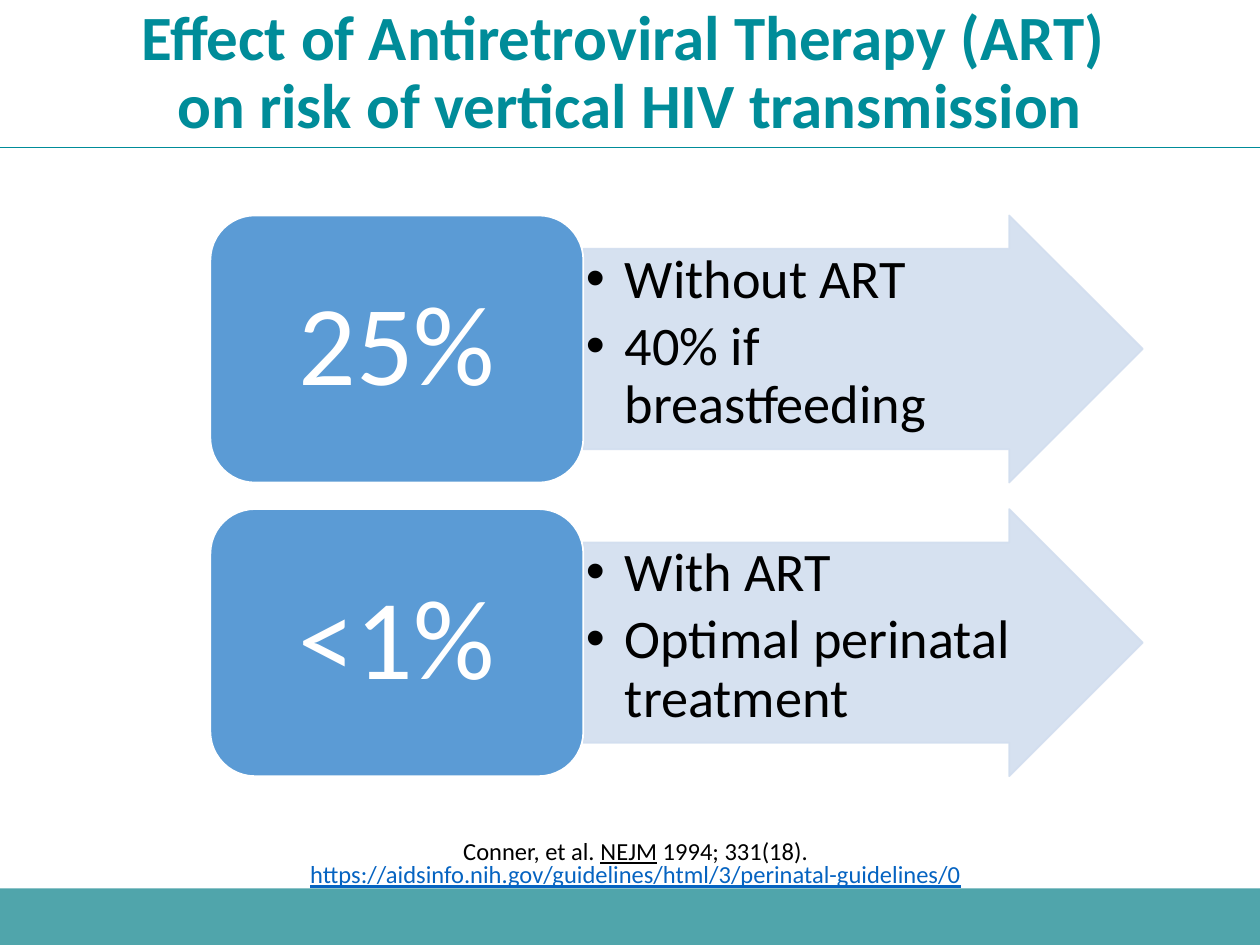
import pptx
import pptx.util
import pptx.dml.color
import pptx.enum.shapes
import pptx.enum.text
import pptx.oxml
import pptx.oxml.ns
from lxml import etree

Inches = pptx.util.Inches
Pt = pptx.util.Pt
SHAPE = pptx.enum.shapes.MSO_SHAPE
ALIGN = pptx.enum.text.PP_ALIGN
ANCHOR = pptx.enum.text.MSO_ANCHOR
SIZE = pptx.enum.text.MSO_AUTO_SIZE
qn = pptx.oxml.ns.qn

COLORS = {"teal": "008C99", "band": "50A5AB", "blue": "5B9BD5",
          "pale": "D2DEEF", "link": "0563C1", "black": "000000",
          "white": "FFFFFF"}
ROWS = [("25%", ["Without ART", "40% if breastfeeding"]),
        ("<1%", ["With ART", "Optimal perinatal treatment"])]


def color(name):
    return pptx.dml.color.RGBColor.from_string(COLORS[name])


def style(font, size, name, bold=False):
    font.name = "Calibri"
    font.size = Pt(size)
    font.bold = bold
    font.color.rgb = color(name)


def inset(frame, side, end):
    frame.margin_left = frame.margin_right = Inches(side)
    frame.margin_top = frame.margin_bottom = Inches(end)


def fade(fill, amount):
    """Set the opacity of a solid fill, in percent."""
    tint = fill.find(".//" + qn("a:srgbClr"))
    etree.SubElement(tint, qn("a:alpha"), val=str(amount * 1000))


def add_block(slide, kind, box, fill, line=None):
    block = slide.shapes.add_shape(kind, *map(Inches, box))
    block.shadow.inherit = False
    block.fill.solid()
    block.fill.fore_color.rgb = color(fill)
    if line:
        block.line.color.rgb = color(line)
        block.line.width = Pt(1)
    else:
        block.line.fill.background()
    return block


def add_title(slide, box):
    x, y, w, h = box
    title = slide.shapes.title
    title.left, title.top, title.width, title.height = map(Inches, box)
    frame = title.text_frame
    frame.word_wrap = True
    frame.auto_size = SIZE.NONE
    frame.vertical_anchor = ANCHOR.MIDDLE
    para = frame.paragraphs[0]
    para.text = ("Effect of Antiretroviral Therapy (ART) \n"
                 "on risk of vertical HIV transmission")
    para.alignment = ALIGN.CENTER
    para.line_spacing = 0.9
    for run in para.runs:
        style(run.font, 36, "teal", True)

    # Rule below the title
    rule = slide.shapes.add_connector(
        pptx.enum.shapes.MSO_CONNECTOR.STRAIGHT,
        Inches(x), Inches(y + h), Inches(x + w), Inches(y + h))
    rule.line.color.rgb = color("teal")
    rule.line.width = Pt(0.5)
    etree.SubElement(rule._element.spPr, qn("a:effectLst"))


def add_row(slide, box, rate, notes):
    x, y, w, h = box
    split = w * 0.4

    # Arrow with the conditions
    arrow = add_block(slide, SHAPE.RIGHT_ARROW,
                      (x + split, y, w - split, h), "pale", "pale")
    arrow.adjustments[0], arrow.adjustments[1] = 0.75, 0.5
    props = arrow._element.spPr
    fade(props.find(qn("a:solidFill")), 90)
    fade(props.find(qn("a:ln")), 90)
    frame = arrow.text_frame
    frame.word_wrap = True
    frame.vertical_anchor = ANCHOR.TOP
    inset(frame, 0.02, 0.02)
    for i, note in enumerate(notes):
        para = frame.add_paragraph() if i else frame.paragraphs[0]
        para.text = note
        para.alignment = ALIGN.LEFT
        para.line_spacing = 0.9
        para.space_after = Pt(4.7)
        look = para._p.get_or_add_pPr()
        look.set("marL", str(Inches(0.31)))
        look.set("indent", str(Inches(-0.31)))
        etree.SubElement(look, qn("a:buFont"), typeface="Arial")
        etree.SubElement(look, qn("a:buChar"), char="•")
        style(para.runs[0].font, 31, "black")

    # Rounded box with the risk
    risk = add_block(slide, SHAPE.ROUNDED_RECTANGLE,
                     (x, y, split, h), "blue", "white")
    frame = risk.text_frame
    frame.word_wrap = True
    frame.vertical_anchor = ANCHOR.MIDDLE
    inset(frame, 0.27, 0.14)
    frame.text = rate
    para = frame.paragraphs[0]
    para.alignment = ALIGN.CENTER
    para.line_spacing = 0.9
    style(para.runs[0].font, 65, "white")


def add_source(slide, box):
    frame = slide.shapes.add_textbox(*map(Inches, box)).text_frame
    frame.word_wrap = True
    link = "https://aidsinfo.nih.gov/guidelines/html/3/perinatal-guidelines/0"
    lines = [[("Conner, et al. ", "black", False), ("NEJM", "black", True),
              (" 1994; 331(18).", "black", False)],
             [(link, "link", True)]]
    for i, parts in enumerate(lines):
        para = frame.add_paragraph() if i else frame.paragraphs[0]
        para.alignment = ALIGN.CENTER
        para.line_spacing = 0.8
        para._p.get_or_add_pPr().set("marL", str(Inches(0.07)))
        for text, name, under in parts:
            run = para.add_run()
            run.text = text
            style(run.font, 14, name)
            run.font.underline = under


def main():
    deck = pptx.Presentation()
    deck.slide_width, deck.slide_height = Inches(10), Inches(7.5)
    slide = deck.slides.add_slide(deck.slide_layouts[5])

    # Footer band
    add_block(slide, SHAPE.RECTANGLE, (0, 7.05, 10, 0.45), "band")
    add_title(slide, (0, 0, 10, 1.17))
    for i, (rate, notes) in enumerate(ROWS):
        add_row(slide, (1.67, 1.71 + i * 2.33, 7.4, 2.12), rate, notes)
    add_source(slide, (1.48, 6.63, 7.06, 0.48))
    deck.save("out.pptx")


if __name__ == "__main__":
    main()
